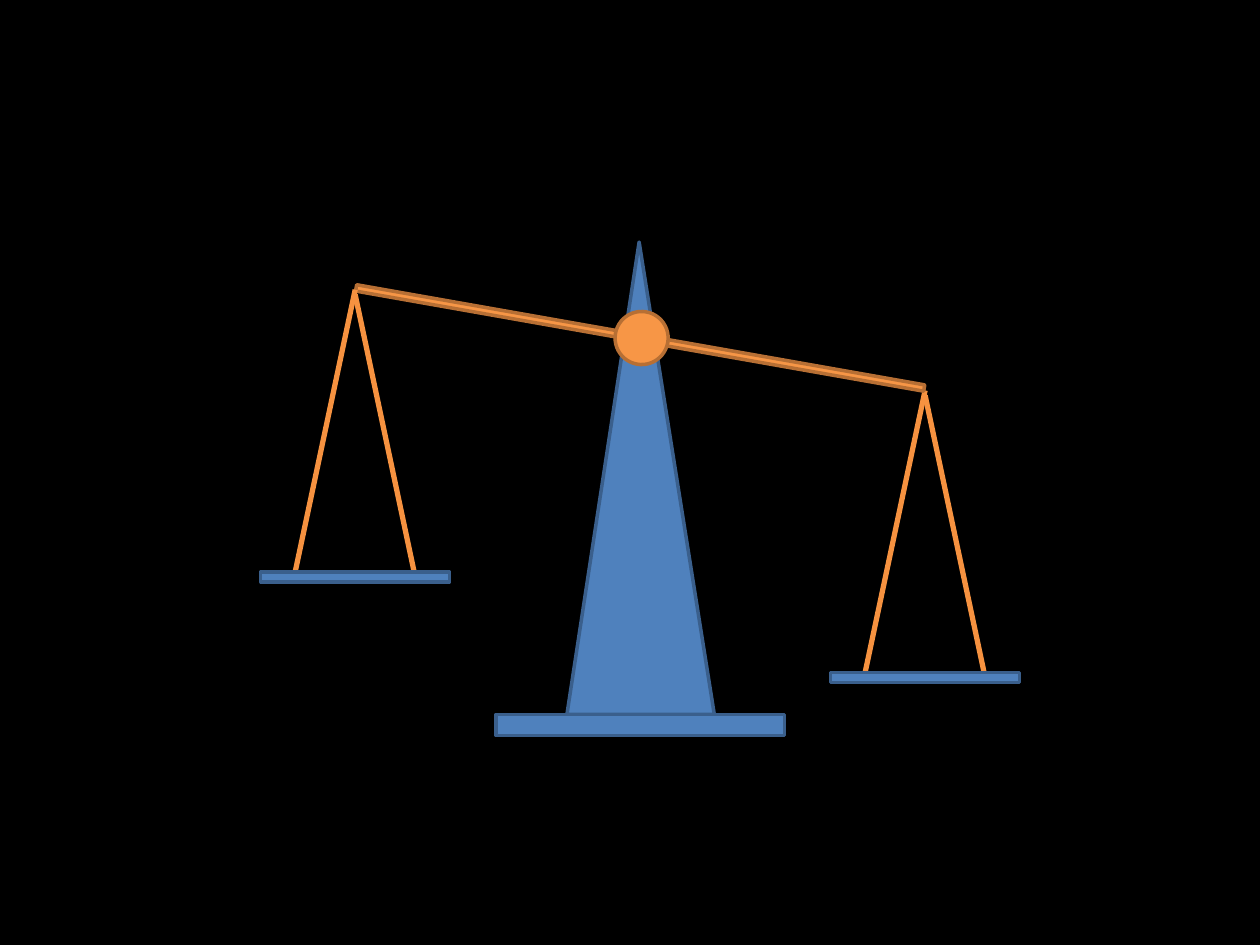
"""Build a slide showing a balance scale that tips to the right."""
from lxml import etree
from pptx import Presentation
from pptx.dml.color import RGBColor
from pptx.enum.shapes import MSO_CONNECTOR, MSO_SHAPE
from pptx.oxml.ns import qn
from pptx.util import Cm, Pt

RECTANGLE = MSO_SHAPE.RECTANGLE
TRIANGLE = MSO_SHAPE.ISOSCELES_TRIANGLE
OVAL = MSO_SHAPE.OVAL
STRAIGHT = MSO_CONNECTOR.STRAIGHT

BLACK = RGBColor(0x00, 0x00, 0x00)
BLUE = RGBColor(0x4F, 0x81, 0xBD)
DARK_BLUE = RGBColor(0x3A, 0x5F, 0x8C)
ORANGE = RGBColor(0xF7, 0x96, 0x46)
DARK_ORANGE = RGBColor(0xB7, 0x6F, 0x34)
CORD_ORANGE = RGBColor(0xF6, 0x92, 0x40)

TILT = 10
CORD_DROP = 5.69
CORD_SPREAD = 1.21
CORD_STAGGER = 0.1
PAN_WIDTH = 3.81
PAN_HEIGHT = 0.2


def add_solid(shapes, kind, left, top, width, height, fill, outline):
    """Add a filled and outlined preset shape, measured in centimetres."""
    solid = shapes.add_shape(kind, Cm(left), Cm(top), Cm(width), Cm(height))
    solid.shadow.inherit = False
    solid.fill.solid()
    solid.fill.fore_color.rgb = fill
    solid.line.color.rgb = outline
    solid.line.width = Pt(2)
    return solid


def add_cord(shapes, x, y, spread):
    """Add a cord that hangs from (x, y) and ends spread to the side."""
    cord = shapes.add_connector(
        STRAIGHT, Cm(x), Cm(y), Cm(x + spread), Cm(y + CORD_DROP))
    cord.line.color.rgb = CORD_ORANGE
    cord.line.width = Pt(3)
    etree.SubElement(cord._element.spPr, qn("a:effectLst"))


def add_hanging_pan(page, x, y):
    """Add a grouped pan with its two cords, hung from (x, y)."""
    shapes = page.shapes.add_group_shape().shapes
    add_cord(shapes, x, y, -CORD_SPREAD)
    add_cord(shapes, x, y + CORD_STAGGER, CORD_SPREAD)
    add_solid(shapes, RECTANGLE, x - PAN_WIDTH / 2, y + CORD_DROP,
              PAN_WIDTH, PAN_HEIGHT, BLUE, DARK_BLUE)


def add_stand(page):
    """Add the pointed pillar and its base."""
    pillar = add_solid(page.shapes, TRIANGLE, 11.43, 4.88, 2.97, 9.52,
                       BLUE, DARK_BLUE)
    pillar.adjustments[0] = 0.49
    add_solid(page.shapes, RECTANGLE, 10, 14.4, 5.82, 0.43, BLUE, DARK_BLUE)


def add_beam(page):
    """Add the tilted beam and its pivot as one group."""
    shapes = page.shapes.add_group_shape().shapes
    beam = add_solid(shapes, RECTANGLE, 7.09, 6.75, 11.63, 0.13,
                     ORANGE, DARK_ORANGE)
    pivot = add_solid(shapes, OVAL, 12.4, 6.28, 1.07, 1.07,
                      ORANGE, DARK_ORANGE)
    beam.rotation = pivot.rotation = TILT


def main():
    """Build the deck and save it."""
    deck = Presentation()
    deck.slide_width, deck.slide_height = Cm(25.4), Cm(19.05)
    page = deck.slides.add_slide(deck.slide_layouts[6])
    page.background.fill.solid()
    page.background.fill.fore_color.rgb = BLACK
    add_stand(page)
    add_hanging_pan(page, 18.65, 7.87)
    add_beam(page)
    add_hanging_pan(page, 7.16, 5.84)
    deck.save("out.pptx")


if __name__ == "__main__":
    main()
